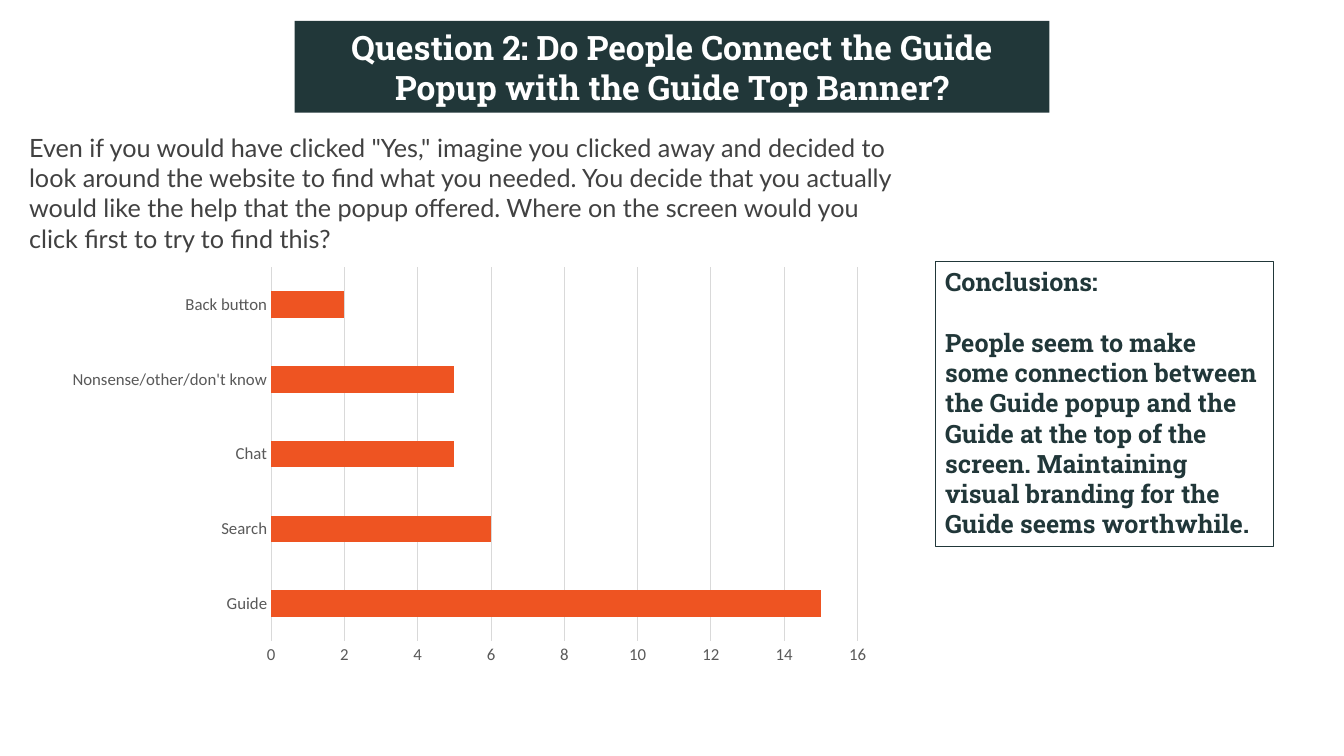
from lxml import etree
from pptx import Presentation
from pptx import util as u
from pptx.chart.data import CategoryChartData
from pptx.dml.color import RGBColor
from pptx.enum import chart as ch, text
from pptx.oxml import ns

DARK, GREY, LABEL, GRID, ORANGE = "213739", "414141", "595959", "D9D9D9", "EE5422"


def rgb(value):
    """Turn a hex string into a colour."""
    return RGBColor.from_string(value)


class Deck:
    """Holds the style and the current slide."""

    head_font, body_font, chart_font = "Roboto Slab", "Lato", "Calibri"

    def __init__(self, width, height):
        """Start a presentation of the given size in points."""
        self.prs = Presentation()
        self.prs.slide_width, self.prs.slide_height = u.Pt(width), u.Pt(height)

    def add_slide(self):
        """Add a title-only slide."""
        self.slide = self.prs.slides.add_slide(self.prs.slide_layouts[5])

    def set_text(self, sp, paragraphs, font, size, color, bold=False,
                 align=text.PP_ALIGN.LEFT, anchor=text.MSO_ANCHOR.TOP, gap=0):
        """Fill a shape with formatted paragraphs."""
        tf = sp.text_frame
        tf.text = "\n".join(paragraphs)
        tf.word_wrap, tf.vertical_anchor = True, anchor
        tf.auto_size = text.MSO_AUTO_SIZE.NONE
        for i, p in enumerate(tf.paragraphs):
            p.alignment = align
            p.space_before = u.Pt(gap if i else 0)
            p.font.name, p.font.size, p.font.bold = font, u.Pt(size), bold
            p.font.color.rgb = rgb(color)

    def title(self, box, words):
        """Place and format the title as a filled banner."""
        sp = self.slide.shapes.title
        sp.left, sp.top, sp.width, sp.height = map(u.Pt, box)
        sp.fill.solid()
        sp.fill.fore_color.rgb = rgb(DARK)
        self.set_text(sp, [words], self.head_font, 24, "FFFFFF", True,
                      text.PP_ALIGN.CENTER, text.MSO_ANCHOR.MIDDLE)

    def body(self, box, words):
        """Add a plain paragraph of text."""
        sp = self.slide.shapes.add_textbox(*map(u.Pt, box))
        self.set_text(sp, [words], self.body_font, 18, GREY)

    def callout(self, box, paragraphs):
        """Add an outlined box of bold text."""
        sp = self.slide.shapes.add_textbox(*map(u.Pt, box))
        sp.line.color.rgb, sp.line.width = rgb(DARK), u.Pt(0.75)
        self.set_text(sp, paragraphs, self.head_font, 18, DARK, True, gap=21.6)

    def bar_chart(self, box, name, counts, plot):
        """Add a horizontal bar chart with a fixed plot area."""
        data = CategoryChartData()
        data.categories = list(counts)
        data.add_series(name, list(counts.values()))
        frame = self.slide.shapes.add_chart(
            ch.XL_CHART_TYPE.BAR_CLUSTERED, *map(u.Pt, box), data)
        chart = frame.chart
        chart.has_title = chart.has_legend = False
        chart.font.name, chart.font.size = self.chart_font, u.Pt(12)
        chart.font.color.rgb = rgb(LABEL)
        bars = chart.plots[0]
        bars.gap_width, bars.vary_by_categories = 182, False
        fill = bars.series[0].format.fill
        fill.solid()
        fill.fore_color.rgb = rgb(ORANGE)
        cat, val = chart.category_axis, chart.value_axis
        for axis in (cat, val):
            axis.major_tick_mark = axis.minor_tick_mark = ch.XL_TICK_MARK.NONE
        val.minimum_scale, val.maximum_scale, val.major_unit = 0, 16, 2
        val.format.line.fill.background()
        for line in (cat.format.line, val.major_gridlines.format.line):
            line.color.rgb, line.width = rgb(GRID), u.Pt(0.75)
        self.fix_plot(chart, plot)

    def fix_plot(self, chart, plot):
        """Set the inner plot area as fractions of the chart."""
        area = chart.plots[0]._element.getparent()
        for old in area.findall(ns.qn("c:layout")):
            area.remove(old)
        layout = etree.Element(ns.qn("c:layout"))
        area.insert(0, layout)
        manual = etree.SubElement(layout, ns.qn("c:manualLayout"))
        settings = {"layoutTarget": "inner", "xMode": "edge", "yMode": "edge"}
        settings.update(zip("xywh", map(str, plot)))
        for tag, value in settings.items():
            etree.SubElement(manual, ns.qn("c:" + tag)).set("val", value)


def main():
    """Build and save the slide."""
    deck = Deck(960, 540)
    deck.add_slide()
    deck.title((210.5, 15, 539, 65.5),
               "Question 2: Do People Connect the Guide Popup with the Guide Top Banner?")
    deck.body((13.7, 91, 642, 94.5),
              'Even if you would have clicked "Yes," imagine you clicked away and '
              "decided to look around the website to find what you needed. You decide "
              "that you actually would like the help that the popup offered. Where on "
              "the screen would you click first to try to find this?")
    deck.callout((668, 187, 242, 203.5), [
        "Conclusions:",
        "People seem to make some connection between the Guide popup and the Guide "
        "at the top of the screen. Maintaining visual branding for the Guide seems "
        "worthwhile."])
    deck.bar_chart((40.3, 185, 590, 296.6), "Series 1",
                   {"Guide": 15, "Search": 6, "Chat": 5,
                    "Nonsense/other/don't know": 5, "Back button": 2},
                   (0.26, 0.02, 0.71, 0.9))
    deck.prs.save("out.pptx")


if __name__ == "__main__":
    main()
